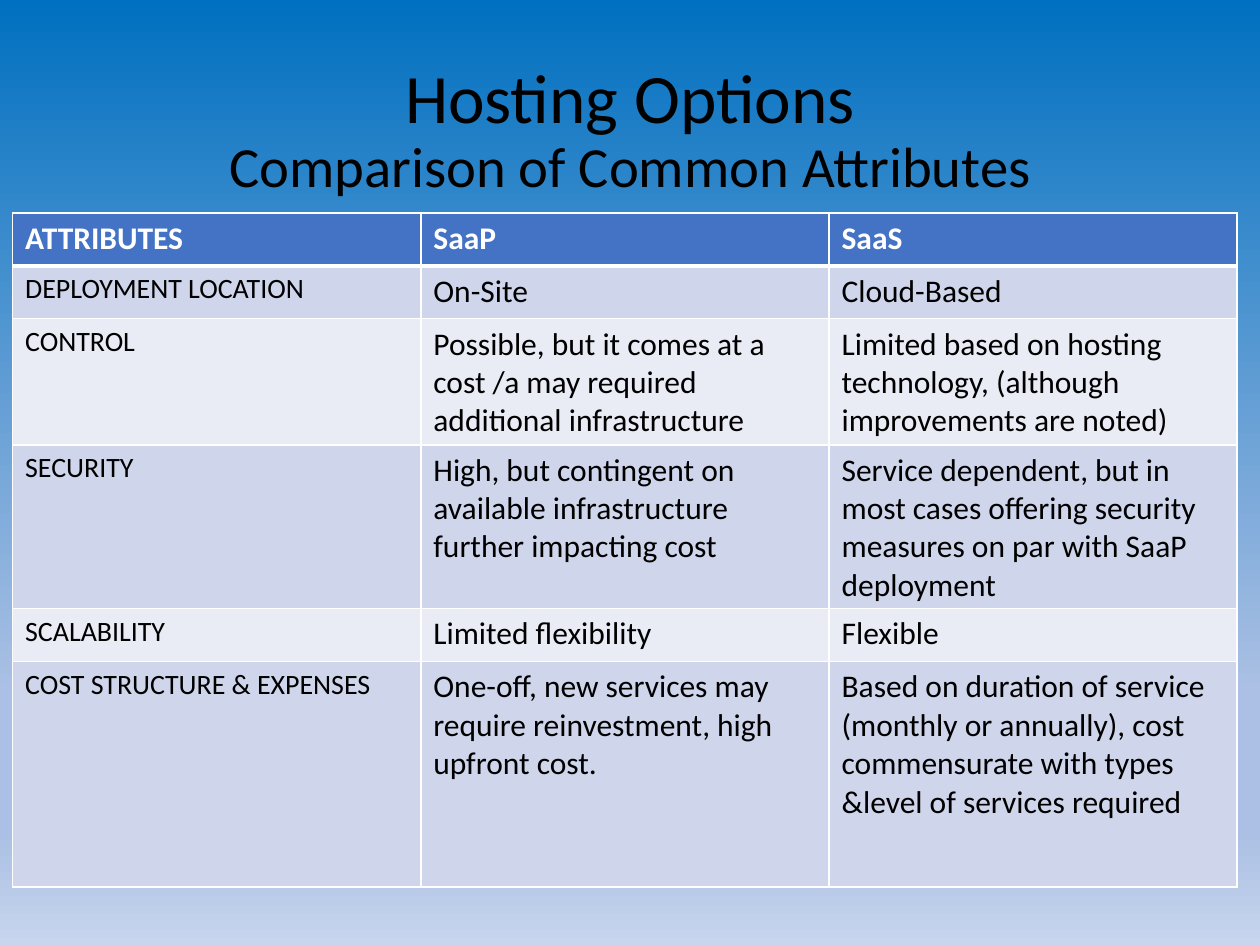
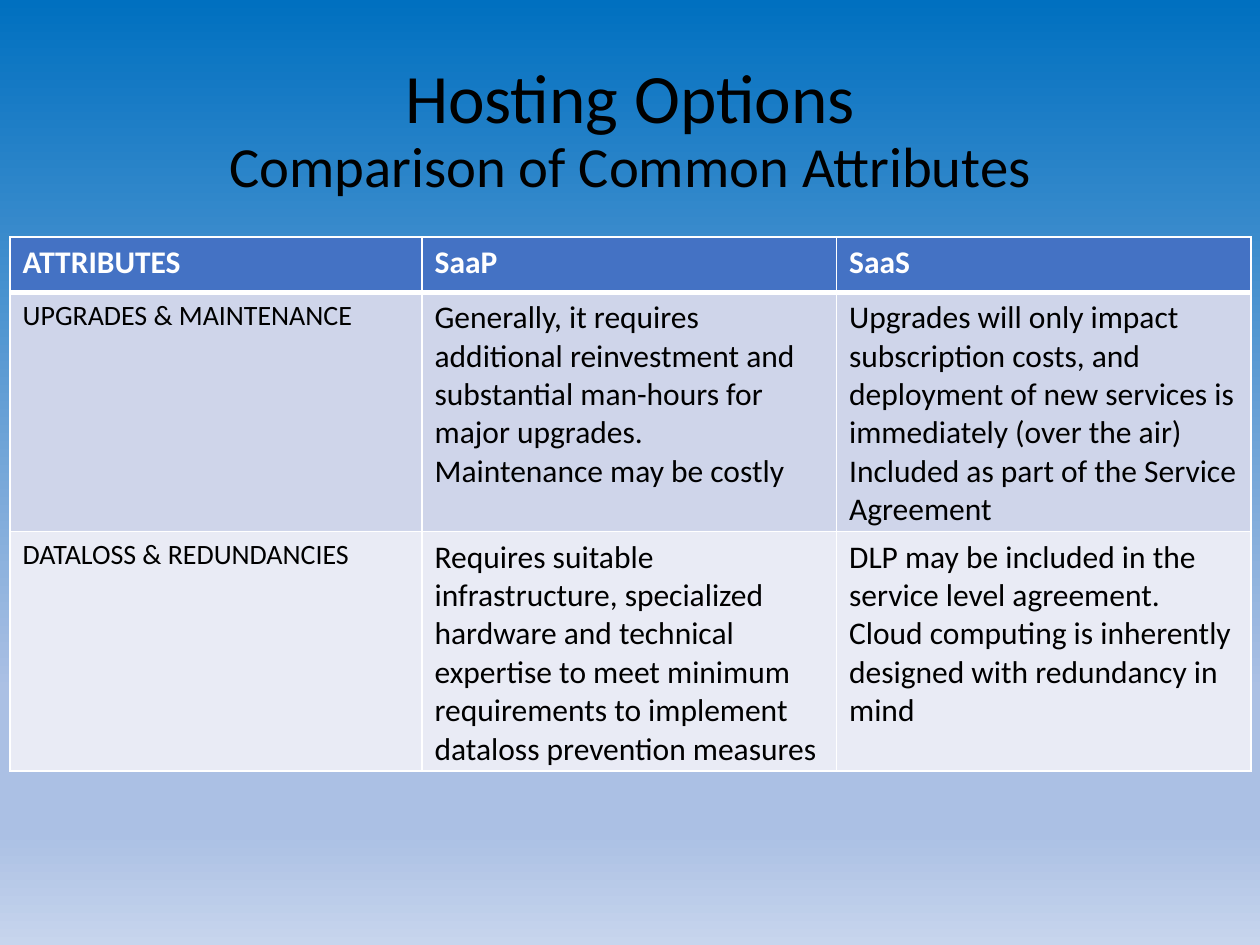
from dataclasses import dataclass

from lxml import etree
from pptx import Presentation
from pptx import util as u
from pptx.dml.color import RGBColor
from pptx.enum import text
from pptx.oxml.ns import qn

COLUMNS, ROWS = 100, 75
FONT = "Calibri"
COLORS = {
    "ink": "000000",
    "white": "FFFFFF",
    "header": "4472C4",
    "band_dark": "CFD5EA",
    "band_light": "E9EBF5",
    "sky": "0070C0",
    "haze": "ABC0E4",
    "mist": "C7D5ED",
}
BACKGROUND_STOPS = ((0, "sky"), (73, "haze"), (88, "haze"), (100, "mist"))
TITLE_LINES = (("Hosting Options", 39.6), ("Comparison of Common Attributes", 32.4))
TITLE_BOX = (6.9, 4, 86.2, 12.9)
HEADINGS = ("ATTRIBUTES", "SaaP", "SaaS")
LABEL_SIZE, BODY_SIZE = 16, 18
THIN, THICK = 1, 3


@dataclass(frozen=True)
class Attribute:
    """One table row; each option holds its paragraphs."""
    name: str
    saap: tuple[str, ...]
    saas: tuple[str, ...]
    height: float


@dataclass(frozen=True)
class Comparison:
    """One table, measured in grid columns and rows."""
    left: float
    top: float
    widths: tuple[float, ...]
    header_height: float
    attributes: tuple[Attribute, ...]


COMPARISONS = (
    Comparison(1, 16.9, (32.4, 32.4, 32.4), 4.2, (
        Attribute("DEPLOYMENT LOCATION", ("On-Site",), ("Cloud-Based",), 4.2),
        Attribute(
            "CONTROL",
            ("Possible, but it comes at a cost /a may required additional infrastructure",),
            ("Limited based on hosting technology, (although improvements are noted)",),
            9.4),
        Attribute(
            "SECURITY",
            ("High, but contingent on available infrastructure further impacting cost",),
            ("Service dependent, but in most cases offering security measures "
             "on par with SaaP deployment",),
            12.3),
        Attribute("SCALABILITY", ("Limited flexibility",), ("Flexible",), 4.2),
        Attribute(
            "COST STRUCTURE & EXPENSES",
            ("One-off, new services may require reinvestment, high upfront cost.",),
            ("Based on duration of service (monthly or annually), cost "
             "commensurate with types &level of services required",),
            17.9),
    )),
    Comparison(0.8, 18.8, (32.7, 32.9, 32.9), 4.4, (
        Attribute(
            "UPGRADES & MAINTENANCE",
            ("Generally, it requires additional reinvestment and substantial "
             "man-hours for major upgrades.",
             "Maintenance may be costly"),
            ("Upgrades will only impact subscription costs, and deployment of "
             "new services is immediately (over the air)",
             "Included as part of the Service Agreement"),
            19),
        Attribute(
            "DATALOSS & REDUNDANCIES",
            ("Requires suitable infrastructure, specialized hardware and technical "
             "expertise to meet minimum requirements to implement dataloss "
             "prevention measures",),
            ("DLP may be included in the service level agreement.",
             "Cloud computing is inherently designed with redundancy in mind"),
            19),
    )),
)


def grid_x(prs, columns: float) -> int:
    return round(prs.slide_width * columns / COLUMNS)


def grid_y(prs, rows: float) -> int:
    return round(prs.slide_height * rows / ROWS)


def add_run(p, words: str, size: float, color: str = "ink", bold: bool = False) -> None:
    r = p.add_run()
    r.text = words
    r.font.name = FONT
    r.font.size = u.Pt(size)
    r.font.bold = bold
    r.font.color.rgb = RGBColor.from_string(COLORS[color])


def paint_background(slide) -> None:
    fill = slide.background.fill
    fill.gradient()
    fill.gradient_angle = 270
    stops = next(slide.element.iter(qn("a:gsLst")))
    for stop in list(stops):
        stops.remove(stop)
    for percent, color in BACKGROUND_STOPS:
        stop = etree.SubElement(stops, qn("a:gs"), pos=str(percent * 1000))
        etree.SubElement(stop, qn("a:srgbClr"), val=COLORS[color])


def add_title(prs, slide) -> None:
    left, top, width, height = TITLE_BOX
    sp = slide.shapes.add_textbox(grid_x(prs, left), grid_y(prs, top),
                                  grid_x(prs, width), grid_y(prs, height))
    tf = sp.text_frame
    tf.word_wrap = True
    tf.vertical_anchor = text.MSO_ANCHOR.MIDDLE
    p = tf.paragraphs[0]
    p.alignment = text.PP_ALIGN.CENTER
    p.line_spacing = 0.9
    for i, (line, size) in enumerate(TITLE_LINES):
        if i:
            p.add_line_break()
        add_run(p, line, size)


def set_borders(cell, top: int, bottom: int) -> None:
    props = cell._tc.get_or_add_tcPr()
    for side, points in (("L", THIN), ("R", THIN), ("T", top), ("B", bottom)):
        line = etree.SubElement(props, qn(f"a:ln{side}"), w=str(u.Pt(points)))
        fill = etree.SubElement(line, qn("a:solidFill"))
        etree.SubElement(fill, qn("a:srgbClr"), val=COLORS["white"])


def fill_cell(cell, paragraphs: tuple[str, ...], row: int, col: int) -> None:
    is_header = row == 0
    set_borders(cell, THICK if row == 1 else THIN, THICK if is_header else THIN)
    band = "header" if is_header else ("band_light", "band_dark")[row % 2]
    cell.fill.solid()
    cell.fill.fore_color.rgb = RGBColor.from_string(COLORS[band])
    size = LABEL_SIZE if col == 0 and not is_header else BODY_SIZE
    tf = cell.text_frame
    for i, words in enumerate(paragraphs):
        p = tf.add_paragraph() if i else tf.paragraphs[0]
        add_run(p, words, size, "white" if is_header else "ink", is_header)


def add_comparison(prs, slide, comparison: Comparison) -> None:
    rows = [tuple((heading,) for heading in HEADINGS)]
    rows += [((a.name,), a.saap, a.saas) for a in comparison.attributes]
    heights = [comparison.header_height] + [a.height for a in comparison.attributes]
    table = slide.shapes.add_table(
        len(rows), len(HEADINGS),
        grid_x(prs, comparison.left), grid_y(prs, comparison.top),
        grid_x(prs, sum(comparison.widths)), grid_y(prs, sum(heights))).table
    for column, width in zip(table.columns, comparison.widths):
        column.width = grid_x(prs, width)
    for i, (cells, height) in enumerate(zip(rows, heights)):
        table.rows[i].height = grid_y(prs, height)
        for j, paragraphs in enumerate(cells):
            fill_cell(table.cell(i, j), paragraphs, i, j)


def main() -> None:
    prs = Presentation()
    prs.slide_width, prs.slide_height = u.Inches(10), u.Inches(7.5)
    for comparison in COMPARISONS:
        slide = prs.slides.add_slide(prs.slide_layouts[6])
        paint_background(slide)
        add_title(prs, slide)
        add_comparison(prs, slide, comparison)
    prs.save("out.pptx")


if __name__ == "__main__":
    main()
